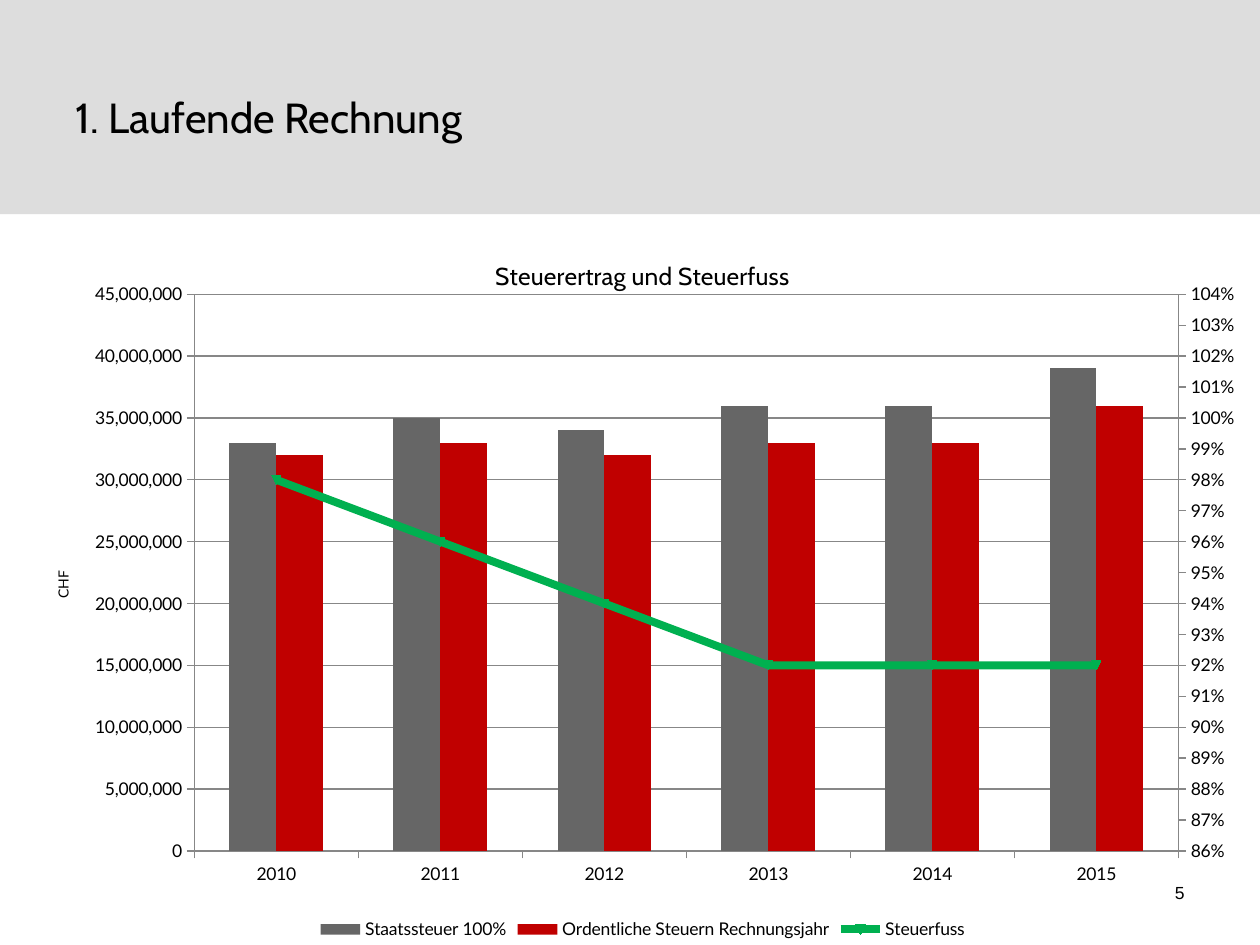
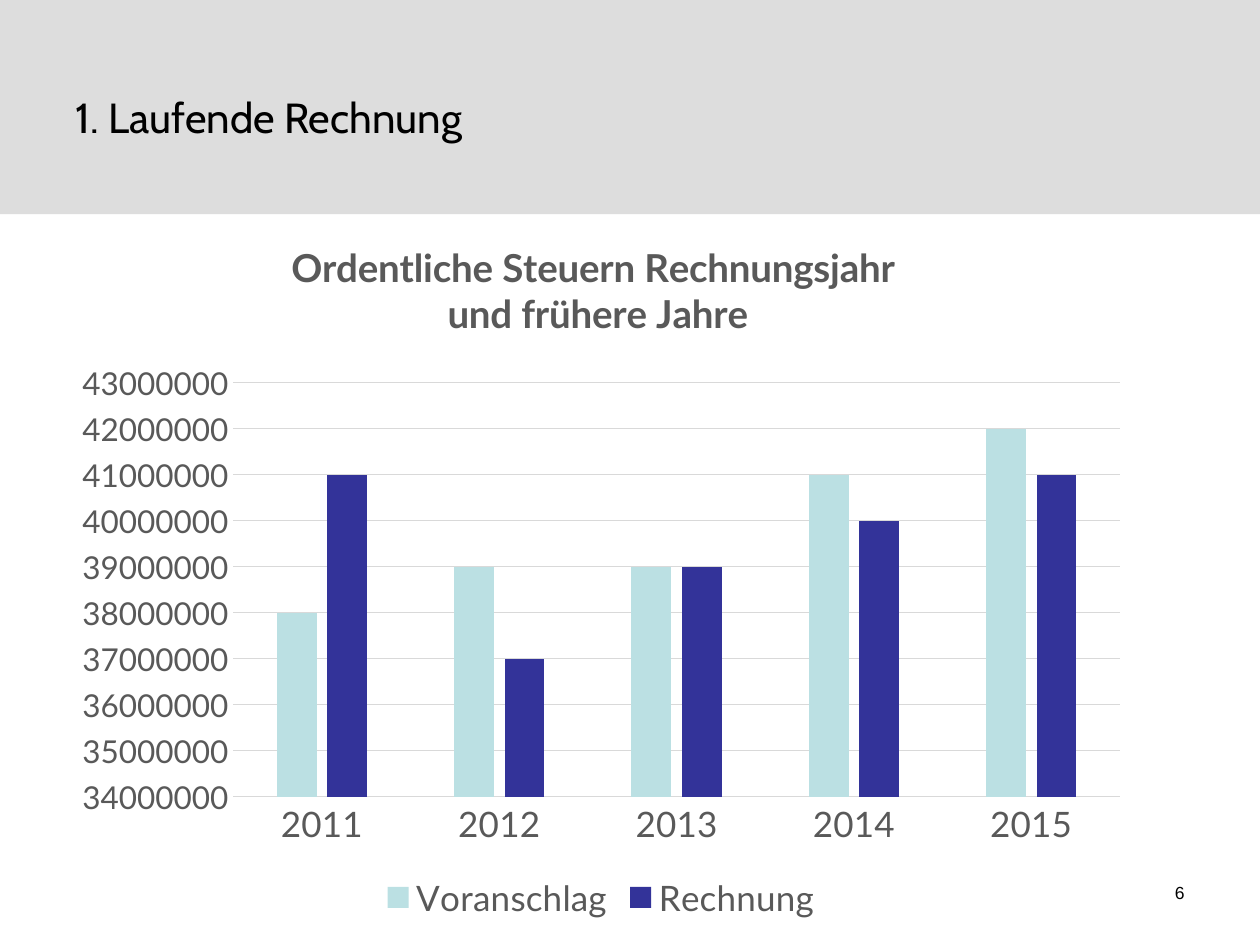
from pptx import Presentation
from pptx.chart.axis import ValueAxis
from pptx.chart.data import CategoryChartData
from pptx.dml.color import RGBColor
from pptx.enum.chart import XL_CHART_TYPE, XL_LEGEND_POSITION, XL_TICK_MARK
from pptx.enum.shapes import MSO_SHAPE
from pptx.enum.text import MSO_ANCHOR, PP_ALIGN
from pptx.oxml import parse_xml
from pptx.oxml.ns import nsdecls
from pptx.util import Pt

BLACK = RGBColor(0x00, 0x00, 0x00)
BAND_GRAY = RGBColor(0xDD, 0xDD, 0xDD)
AXIS_GRAY = RGBColor(0x87, 0x87, 0x87)
GRID_GRAY = RGBColor(0xD9, 0xD9, 0xD9)
LABEL_GRAY = RGBColor(0x59, 0x59, 0x59)
STATE_TAX_GRAY = RGBColor(0x66, 0x66, 0x66)
ORDINARY_TAX_RED = RGBColor(0xC0, 0x00, 0x00)
TAX_RATE_GREEN = RGBColor(0x00, 0xB0, 0x50)
BUDGET_TEAL = RGBColor(0xBB, 0xE0, 0xE3)
ACCOUNTS_BLUE = RGBColor(0x33, 0x33, 0x99)

TITLE_FONT, CHART_FONT, NUMBER_FONT = "Cabin", "Lato", "Arial"
TITLE_ONLY = 5
MILLION = 1_000_000


def format_font(font, name, size, color, bold=False):
    font.name = name
    font.size = Pt(size)
    font.color.rgb = color
    font.bold = bold


def add_run(paragraph, text, name, size, color, bold=False):
    run = paragraph.add_run()
    run.text = text
    format_font(run.font, name, size, color, bold)


def add_page(prs, title, number):
    """Add a slide with the gray band, its title and the page number."""
    slide = prs.slides.add_slide(prs.slide_layouts[TITLE_ONLY])

    band = slide.shapes.add_shape(
        MSO_SHAPE.RECTANGLE, 0, 0, prs.slide_width, Pt(122.4))
    band.shadow.inherit = False
    band.fill.solid()
    band.fill.fore_color.rgb = BAND_GRAY
    band.line.fill.background()
    slide.shapes.element.insert(2, band.element)  # behind the title

    heading = slide.shapes.title
    heading.left, heading.top = Pt(36), Pt(21.6)
    heading.width, heading.height = Pt(648), Pt(90)
    heading.text_frame.vertical_anchor = MSO_ANCHOR.MIDDLE
    paragraph = heading.text_frame.paragraphs[0]
    paragraph.alignment = PP_ALIGN.LEFT
    add_run(paragraph, title, TITLE_FONT, 24, BLACK)

    page_number = slide.shapes.add_textbox(Pt(516), Pt(500.4), Pt(168), Pt(28.8))
    page_number.text_frame.word_wrap = True
    paragraph = page_number.text_frame.paragraphs[0]
    paragraph.alignment = PP_ALIGN.RIGHT
    add_run(paragraph, number, NUMBER_FONT, 10, BLACK)
    return slide


def in_millions(*amounts):
    return [amount * MILLION for amount in amounts]


def add_columns(slide, box, years, series, gap, overlap):
    """Add a column chart; series holds (name, values, number format)."""
    data = CategoryChartData()
    data.categories = years
    for name, values, number_format in series:
        data.add_series(name, values, number_format)
    chart = slide.shapes.add_chart(
        XL_CHART_TYPE.COLUMN_CLUSTERED, *[Pt(length) for length in box], data).chart
    format_font(chart.font, CHART_FONT, 10, BLACK)
    columns = chart.plots[0]
    columns.vary_by_categories = False
    columns.gap_width, columns.overlap = gap, overlap
    return chart


def color_columns(chart, colors):
    for series, color in zip(chart.plots[0].series, colors):
        series.format.fill.solid()
        series.format.fill.fore_color.rgb = color
        series.invert_if_negative = False


def set_chart_title(chart, lines, font, size, color, bold=False, overlay=False):
    chart.has_title = True
    title = chart.chart_title
    paragraph = title.text_frame.paragraphs[0]
    for index, line in enumerate(lines):
        if index:
            paragraph.add_line_break()
        add_run(paragraph, line, font, size, color, bold)
    title.element.xpath("c:overlay")[0].set("val", str(int(overlay)))


def set_legend(chart, size, color):
    chart.has_legend = True
    chart.legend.position = XL_LEGEND_POSITION.BOTTOM
    chart.legend.include_in_layout = False
    format_font(chart.legend.font, CHART_FONT, size, color)


def set_layout(parent, index, target="", **fractions):
    """Fix the place of a chart part, in fractions of the chart."""
    for layout in parent.xpath("c:layout"):
        parent.remove(layout)
    parts = "".join(f'<c:{tag} val="{value}"/>' for tag, value in fractions.items())
    parent.insert(index, parse_xml(
        f'<c:layout {nsdecls("c")}><c:manualLayout>{target}'
        f'<c:xMode val="edge"/><c:yMode val="edge"/>{parts}'
        '</c:manualLayout></c:layout>'))


def place_plot(chart, x, y, w, h):
    set_layout(chart.element.xpath(".//c:plotArea")[0], 0,
               '<c:layoutTarget val="inner"/>', x=x, y=y, w=w, h=h)


def place_title(title, x, y):
    set_layout(title.element, 1, x=x, y=y)


def style_axis(axis, size, color, tick, line_color=None):
    axis.major_tick_mark = tick
    axis.minor_tick_mark = XL_TICK_MARK.NONE
    format_font(axis.tick_labels.font, CHART_FONT, size, color)
    if line_color is None:
        axis.format.line.fill.background()
    else:
        axis.format.line.color.rgb = line_color
        axis.format.line.width = Pt(0.75)


def scale_axis(axis, low, high, step, number_format):
    axis.minimum_scale, axis.maximum_scale = low, high
    axis.major_unit = step
    axis.tick_labels.number_format = number_format
    axis.tick_labels.number_format_is_linked = False


def show_gridlines(axis, color):
    axis.has_major_gridlines = True
    axis.major_gridlines.format.line.color.rgb = color
    axis.major_gridlines.format.line.width = Pt(0.75)


def move_last_series_to_right_axis(chart):
    """Turn the last column series into a line and return its value axis."""
    plot_area = chart.element.xpath(".//c:plotArea")[0]
    columns = plot_area.xpath("c:barChart")[0]
    series = columns.xpath("c:ser")[-1]
    for flag in series.xpath("c:invertIfNegative"):
        series.remove(flag)
    line_chart = parse_xml(
        f'<c:lineChart {nsdecls("c")}><c:grouping val="standard"/>'
        '<c:varyColors val="0"/><c:marker val="1"/>'
        '<c:axId val="5001"/><c:axId val="5002"/></c:lineChart>')
    line_chart.insert(2, series)
    columns.addnext(line_chart)

    def axis_xml(tag, own_id, other_id, deleted, side, crosses):
        return parse_xml(
            f'<c:{tag} {nsdecls("c")}><c:axId val="{own_id}"/>'
            '<c:scaling><c:orientation val="minMax"/></c:scaling>'
            f'<c:delete val="{deleted}"/><c:axPos val="{side}"/>'
            '<c:majorTickMark val="out"/><c:minorTickMark val="none"/>'
            '<c:tickLblPos val="nextTo"/>'
            f'<c:crossAx val="{other_id}"/><c:crosses val="{crosses}"/></c:{tag}>')

    right_axis = axis_xml("valAx", 5002, 5001, 0, "r", "max")
    hidden_years = axis_xml("catAx", 5001, 5002, 1, "b", "autoZero")
    plot_area.xpath("c:valAx")[-1].addnext(right_axis)
    right_axis.addnext(hidden_years)
    return ValueAxis(right_axis)


def add_tax_yield_chart(slide):
    chart = add_columns(
        slide, (14.4, 133.2, 705.6, 406.8),
        ["2010", "2011", "2012", "2013", "2014", "2015"],
        [("Staatssteuer 100%", in_millions(33, 35, 34, 36, 36, 39), "#,##0"),
         ("Ordentliche Steuern Rechnungsjahr",
          in_millions(32, 33, 32, 33, 33, 36), "#,##0"),
         ("Steuerfuss", [0.98, 0.96, 0.94, 0.92, 0.92, 0.92], "0%")],
        gap=150, overlap=0)
    rate_axis = move_last_series_to_right_axis(chart)
    color_columns(chart, [STATE_TAX_GRAY, ORDINARY_TAX_RED])

    rate = chart.plots[1].series[0]
    rate.smooth = False
    rate.format.line.color.rgb = TAX_RATE_GREEN
    rate.format.line.width = Pt(4.5)
    rate.marker.size = 5
    rate.marker.format.fill.solid()
    rate.marker.format.fill.fore_color.rgb = TAX_RATE_GREEN
    rate.marker.format.line.color.rgb = TAX_RATE_GREEN

    francs_axis = chart.value_axis
    for axis in (chart.category_axis, francs_axis, rate_axis):
        style_axis(axis, 10, BLACK, XL_TICK_MARK.OUTSIDE, AXIS_GRAY)
    scale_axis(francs_axis, 0, 45 * MILLION, 5 * MILLION, "#,##0")
    scale_axis(rate_axis, 0.86, 1.04, 0.01, "0%")
    show_gridlines(francs_axis, AXIS_GRAY)
    unit = francs_axis.axis_title
    add_run(unit.text_frame.paragraphs[0], "CHF", CHART_FONT, 8, BLACK)
    unit.element.xpath(".//a:bodyPr")[0].set("rot", "-5400000")
    place_title(unit, 0.02, 0.47)

    set_chart_title(chart, ["Steuerertrag und Steuerfuss"], TITLE_FONT, 14, BLACK,
                    overlay=True)
    set_legend(chart, 10, BLACK)
    place_plot(chart, 0.137, 0.086, 0.797, 0.782)


def add_budget_chart(slide):
    chart = add_columns(
        slide, (34.56, 128.16, 617.76, 401.04),
        ["2011", "2012", "2013", "2014", "2015"],
        [("Voranschlag", in_millions(38, 39, 39, 41, 42), "General"),
         ("Rechnung", in_millions(41, 37, 39, 40, 41), "General")],
        gap=219, overlap=-27)
    color_columns(chart, [BUDGET_TEAL, ACCOUNTS_BLUE])
    style_axis(chart.category_axis, 20, LABEL_GRAY, XL_TICK_MARK.NONE, GRID_GRAY)
    style_axis(chart.value_axis, 18, LABEL_GRAY, XL_TICK_MARK.NONE)
    scale_axis(chart.value_axis, 34 * MILLION, 43 * MILLION, MILLION, "General")
    show_gridlines(chart.value_axis, GRID_GRAY)
    set_chart_title(chart, ["Ordentliche Steuern Rechnungsjahr ", "und frühere Jahre"],
                    CHART_FONT, 22, LABEL_GRAY, bold=True)
    place_title(chart.chart_title, 0.21, 0.02)
    set_legend(chart, 20, LABEL_GRAY)
    place_plot(chart, 0.16, 0.226, 0.82, 0.59)


def main():
    prs = Presentation()
    prs.slide_width, prs.slide_height = Pt(720), Pt(540)
    for number, add_content in enumerate((add_tax_yield_chart, add_budget_chart), 5):
        add_content(add_page(prs, "1. Laufende Rechnung", str(number)))
    prs.save("out.pptx")


if __name__ == "__main__":
    main()
